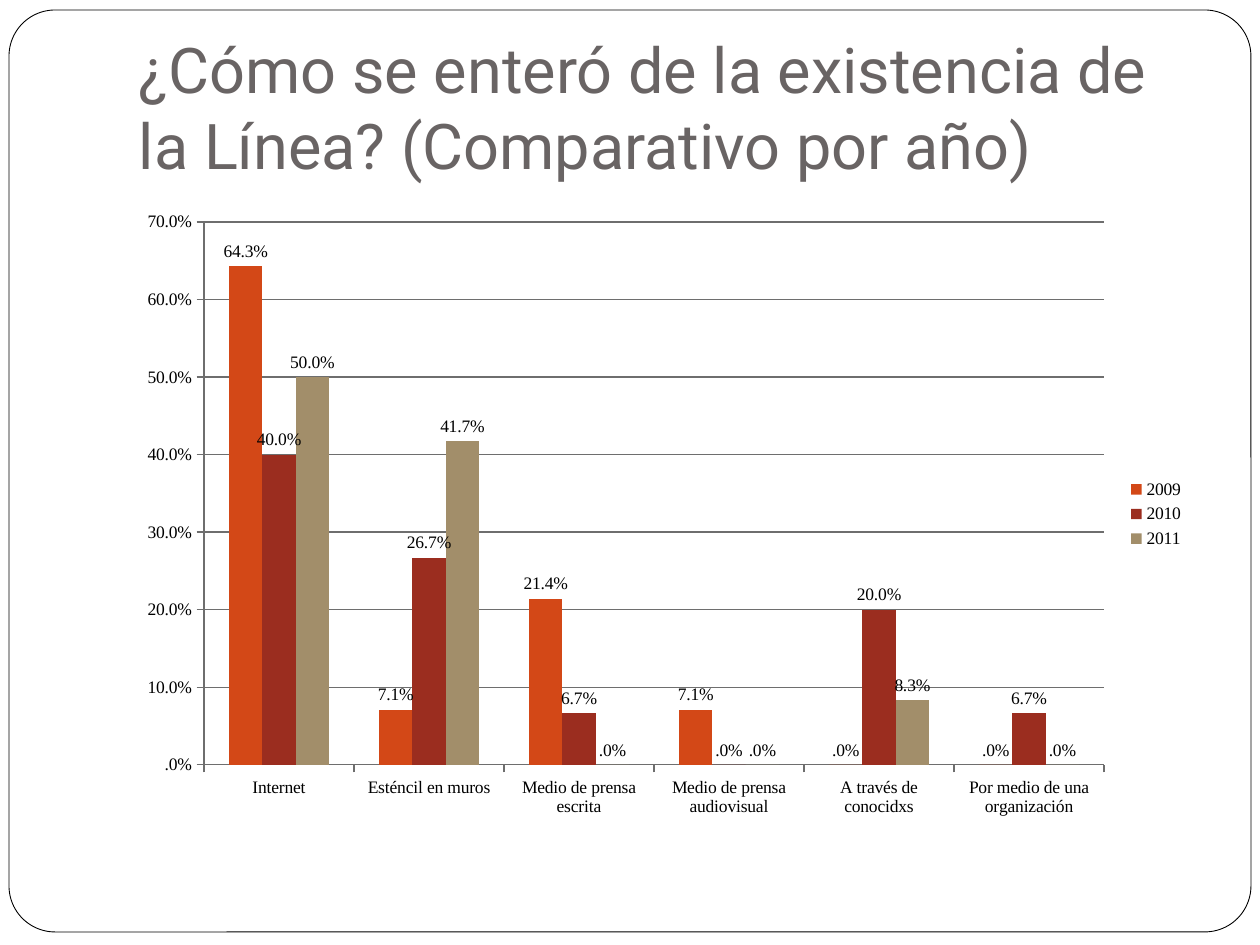
from lxml import etree
from pptx import Presentation
from pptx.chart.data import CategoryChartData
from pptx.dml.color import RGBColor
from pptx.enum.chart import XL_CHART_TYPE as CT, XL_LABEL_POSITION as LP
from pptx.enum.chart import XL_LEGEND_POSITION as LEG, XL_TICK_MARK as TICK
from pptx.enum.shapes import MSO_SHAPE as SHAPE
from pptx.enum.text import MSO_ANCHOR as ANCHOR, PP_ALIGN as ALIGN
from pptx.util import Pt

SCALE = 914400 / 126  # EMU per px
COLORS = {
    "white": "FFFFFF", "black": "000000", "title": "696464", "axis": "6E6E6E",
    "2009": "D34817", "2010": "9B2D1F", "2011": "A28E6A",
}
PERCENT = "####.0%"


def px(*lengths):
    return [round(n * SCALE) for n in lengths]


def rgb(name):
    return RGBColor.from_string(COLORS[name])


prs = Presentation()
prs.slide_width, prs.slide_height = px(1260, 945)
s = prs.slides.add_slide(prs.slide_layouts[6])

# Rounded frame
sp = s.shapes.add_shape(SHAPE.ROUNDED_RECTANGLE, *px(9, 10, 1242, 922))
sp.adjustments[0] = 0.05
sp.shadow.inherit = False
sp.fill.solid()
sp.fill.fore_color.rgb = rgb("white")
sp.line.color.rgb = rgb("black")
sp.line.width = Pt(0.5)

# Title
tf = s.shapes.add_textbox(*px(126, 38, 1071, 157)).text_frame
tf.word_wrap = True
tf.vertical_anchor = ANCHOR.BOTTOM
tf.margin_left, tf.margin_top, tf.margin_right, tf.margin_bottom = px(13, 6, 13, 13)
p = tf.paragraphs[0]
p.alignment = ALIGN.LEFT
r = p.add_run()
r.text = "¿Cómo se enteró de la existencia de la Línea? (Comparativo por año)"
r.font.name = "Roboto"
r.font.size = Pt(36)
r.font.color.rgb = rgb("title")

# Chart data
data = CategoryChartData(number_format=PERCENT)
data.categories = [
    "Internet", "Esténcil en muros", "Medio de prensa escrita",
    "Medio de prensa audiovisual", "A través de conocidxs",
    "Por medio de una organización",
]
data.add_series("2009", (0.643, 0.071, 0.214, 0.071, 0, 0))
data.add_series("2010", (0.4, 0.267, 0.067, 0, 0.2, 0.067))
data.add_series("2011", (0.5, 0.417, 0, 0, 0.083, 0))

# Chart
chart = s.shapes.add_chart(CT.COLUMN_CLUSTERED, *px(126, 199, 1071, 630), data).chart
chart.has_title = False
chart.font.name = "Times New Roman"
chart.font.size = Pt(10)
chart.font.color.rgb = rgb("black")
chart.has_legend = True
chart.legend.position = LEG.RIGHT
chart.legend.include_in_layout = False

# Columns and their labels
plot = chart.plots[0]
plot.gap_width = 150
plot.overlap = 0
plot.vary_by_categories = False
for series in plot.series:
    series.format.fill.solid()
    series.format.fill.fore_color.rgb = rgb(series.name)
    series.invert_if_negative = False
    labels = series.data_labels
    labels.show_value = True
    labels.number_format = PERCENT
    labels.number_format_is_linked = False
    labels.position = LP.OUTSIDE_END

# Axes
values = chart.value_axis
values.minimum_scale, values.maximum_scale, values.major_unit = 0, 0.7, 0.1
values.tick_labels.number_format = PERCENT
values.tick_labels.number_format_is_linked = False
values.has_major_gridlines = True
for axis in (values, chart.category_axis):
    axis.major_tick_mark = TICK.OUTSIDE
    axis.minor_tick_mark = TICK.NONE
    axis.format.line.color.rgb = rgb("axis")
    axis.format.line.width = Pt(0.75)
grid = values.major_gridlines.format.line
grid.color.rgb = rgb("axis")
grid.width = Pt(0.75)

# Plot area as shares of the chart
area = plot._element.getparent()
ns = area.nsmap["c"]
for old in area.findall(f"{{{ns}}}layout"):
    area.remove(old)
layout = etree.Element(f"{{{ns}}}layout")
manual = etree.SubElement(layout, f"{{{ns}}}manualLayout")
for tag, val in (("layoutTarget", "inner"), ("xMode", "edge"), ("yMode", "edge"),
                 ("x", 78 / 1071), ("y", 23 / 630), ("w", 900 / 1071), ("h", 543 / 630)):
    etree.SubElement(manual, f"{{{ns}}}{tag}").set("val", str(val))
area.insert(0, layout)

prs.save("out.pptx")
